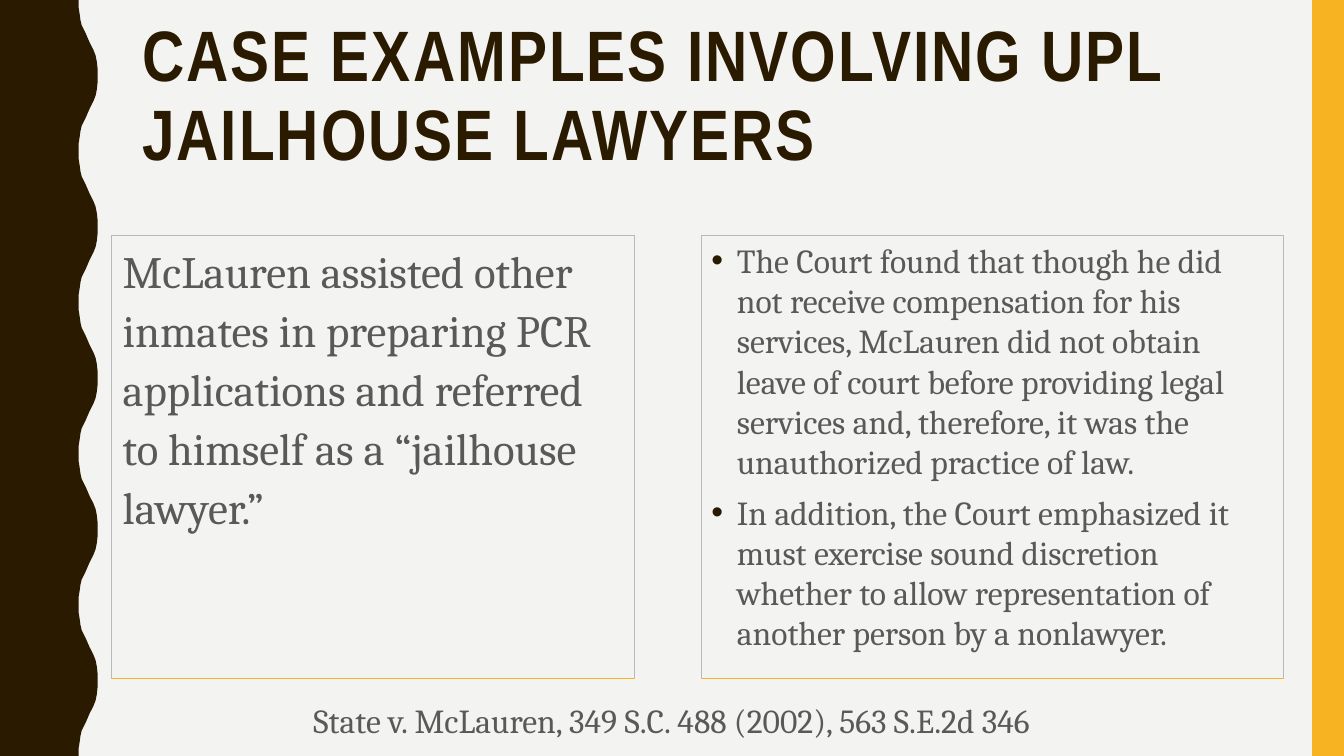
from lxml import etree
from pptx import Presentation
from pptx.dml.color import RGBColor
from pptx.enum.shapes import MSO_SHAPE
from pptx.enum.text import MSO_ANCHOR, MSO_AUTO_SIZE, PP_ALIGN
from pptx.oxml.ns import qn
from pptx.util import Cm, Pt

BROWN = RGBColor(0x2A, 0x1A, 0x00)
AMBER = RGBColor(0xF8, 0xB3, 0x23)
PAPER = RGBColor(0xF3, 0xF3, 0xF2)
GREY = RGBColor(0x59, 0x59, 0x59)
EDGE = RGBColor(0xB9, 0xB9, 0xB9)
LEFT, TOP = PP_ALIGN.LEFT, MSO_ANCHOR.TOP
NO_FIT, RECTANGLE = MSO_AUTO_SIZE.NONE, MSO_SHAPE.RECTANGLE

# Content
TITLE = ["CASE EXAMPLES INVOLVING UPL JAILHOUSE LAWYERS"]
FACTS = ["McLauren assisted other inmates in preparing PCR applications and "
         "referred to himself as a “jailhouse lawyer.”"]
FINDINGS = [
    "The Court found that though he did not receive compensation for his "
    "services, McLauren did not obtain leave of court before providing legal "
    "services and, therefore, it was the unauthorized practice of law.",
    "In addition, the Court emphasized it must exercise sound discretion "
    "whether to allow representation of another person by a nonlawyer.",
]
CITATION = ["State v. McLauren, 349 S.C. 488 (2002), 563 S.E.2d 346"]

# Layout in centimetres: left, top, width, height
WIDTH, HEIGHT = 33.87, 19.05
BAR_WIDTH = 0.8
TITLE_AREA = (2.87, 0.2, 29.41, 4.19)
FACTS_AREA = (2.82, 5.94, 13.18, 11.15)
FINDINGS_AREA = (17.68, 5.94, 14.66, 11.15)
CITATION_AREA = (7.87, 17.6, 19.61, 1.09)

# Wavy edge: trough to crest, then mirrored
WAVES = 5
RISE = [(1.98, 0), (1.98, 0.18), (2.01, 0.36), (2.03, 0.51), (2.06, 0.64),
        (2.11, 0.74), (2.16, 0.84), (2.26, 1.07), (2.31, 1.17), (2.36, 1.27),
        (2.41, 1.4), (2.44, 1.55), (2.46, 1.73), (2.46, 1.9)]

# Text formats
TITLE_FONT = {"name": "Arial Narrow", "size": Pt(51), "bold": True}
FACTS_FONT = {"name": "Cambria", "size": Pt(32), "bold": False}
SMALL_FONT = {"name": "Cambria", "size": Pt(24), "bold": False}


def place(box, area):
    box.left, box.top, box.width, box.height = map(Cm, area)


def paint(shape, color):
    shape.shadow.inherit = False
    shape.fill.solid()
    shape.fill.fore_color.rgb = color
    shape.line.fill.background()


def write(box, lines, font, color, margins, spacing, indent=0, bullet=False,
          tracking=0):
    """Fill a box; spacing holds the line spacing and the space before each line."""
    frame = box.text_frame
    left, top, right = map(Cm, margins)
    layout = {"word_wrap": True, "auto_size": NO_FIT, "vertical_anchor": TOP,
              "margin_left": left, "margin_top": top, "margin_right": right,
              "margin_bottom": 0}
    for name, value in layout.items():
        setattr(frame, name, value)
    line_spacing, gaps = spacing
    for number, (line, gap) in enumerate(zip(lines, gaps)):
        para = frame.paragraphs[0] if number == 0 else frame.add_paragraph()
        para_format = {"alignment": LEFT, "line_spacing": line_spacing,
                       "space_before": Pt(gap), "space_after": Pt(0)}
        for name, value in para_format.items():
            setattr(para, name, value)
        props = para._p.get_or_add_pPr()
        props.set("marL", str(Cm(indent)))
        props.set("indent", str(-Cm(0.64) if bullet else 0))
        if bullet:
            tint = etree.SubElement(props, qn("a:buClr"))
            etree.SubElement(tint, qn("a:srgbClr"), val=str(BROWN))
            etree.SubElement(props, qn("a:buFont"), typeface="Arial")
            etree.SubElement(props, qn("a:buChar"), char="•")
        else:
            etree.SubElement(props, qn("a:buNone"))
        span = para.add_run()
        span.text = line
        for name, value in font.items():
            setattr(span.font, name, value)
        span.font.color.rgb = color
        if tracking:
            span._r.get_or_add_rPr().set("spc", str(tracking))


def frame_box(page, box, area):
    """Amber outline with grey top and sides."""
    place(box, area)
    box.fill.solid()
    box.fill.fore_color.rgb = PAPER
    box.line.color.rgb = AMBER
    box.line.width = Pt(0.75)
    left, top, width, height = area
    right, bottom = left + width, top + height
    corners = [(left, bottom), (left, top), (right, top), (right, bottom)]
    points = [(Cm(x), Cm(y)) for x, y in corners]
    builder = page.shapes.build_freeform(*points[0])
    builder.add_line_segments(points[1:], close=False)
    edge = builder.convert_to_shape()
    edge.shadow.inherit = False
    edge.fill.background()
    edge.line.color.rgb = EDGE
    edge.line.width = Pt(0.75)


def draw_wave(page):
    period = HEIGHT / WAVES
    profile = RISE + [(x, period - y) for x, y in reversed(RISE)]
    edge = [(x, y + wave * period) for wave in range(WAVES) for x, y in profile]
    points = [(Cm(x), Cm(y)) for x, y in edge + [(0, HEIGHT)]]
    builder = page.shapes.build_freeform(0, 0)
    builder.add_line_segments(points, close=True)
    paint(builder.convert_to_shape(), BROWN)


def main():
    deck = Presentation()
    deck.slide_width, deck.slide_height = Cm(WIDTH), Cm(HEIGHT)
    page = deck.slides.add_slide(deck.slide_layouts[3])
    title, facts, findings = page.placeholders

    # Background, wavy band and side bar
    page.background.fill.solid()
    page.background.fill.fore_color.rgb = PAPER
    draw_wave(page)
    bar = page.shapes.add_shape(RECTANGLE, Cm(WIDTH - BAR_WIDTH), 0,
                                Cm(BAR_WIDTH), Cm(HEIGHT))
    paint(bar, AMBER)

    # Title
    place(title, TITLE_AREA)
    write(title, TITLE, TITLE_FONT, BROWN, (0, 0.25, 0), (Pt(55.9), [7.2]),
          indent=0.71, tracking=150)

    # Facts and findings
    frame_box(page, facts, FACTS_AREA)
    write(facts, FACTS, FACTS_FONT, GREY, (0, 0.08, 0.76), (Pt(42), [1.9]),
          indent=0.27)
    frame_box(page, findings, FINDINGS_AREA)
    write(findings, FINDINGS, SMALL_FONT, GREY, (0, 0.1, 1), (1.0, [2.6, 7]),
          indent=0.89, bullet=True)

    # Citation
    citation = page.shapes.add_textbox(*map(Cm, CITATION_AREA))
    write(citation, CITATION, SMALL_FONT, GREY, (0, 0.03, 0), (1.0, [1]),
          indent=0.03)

    deck.save("out.pptx")


if __name__ == "__main__":
    main()
